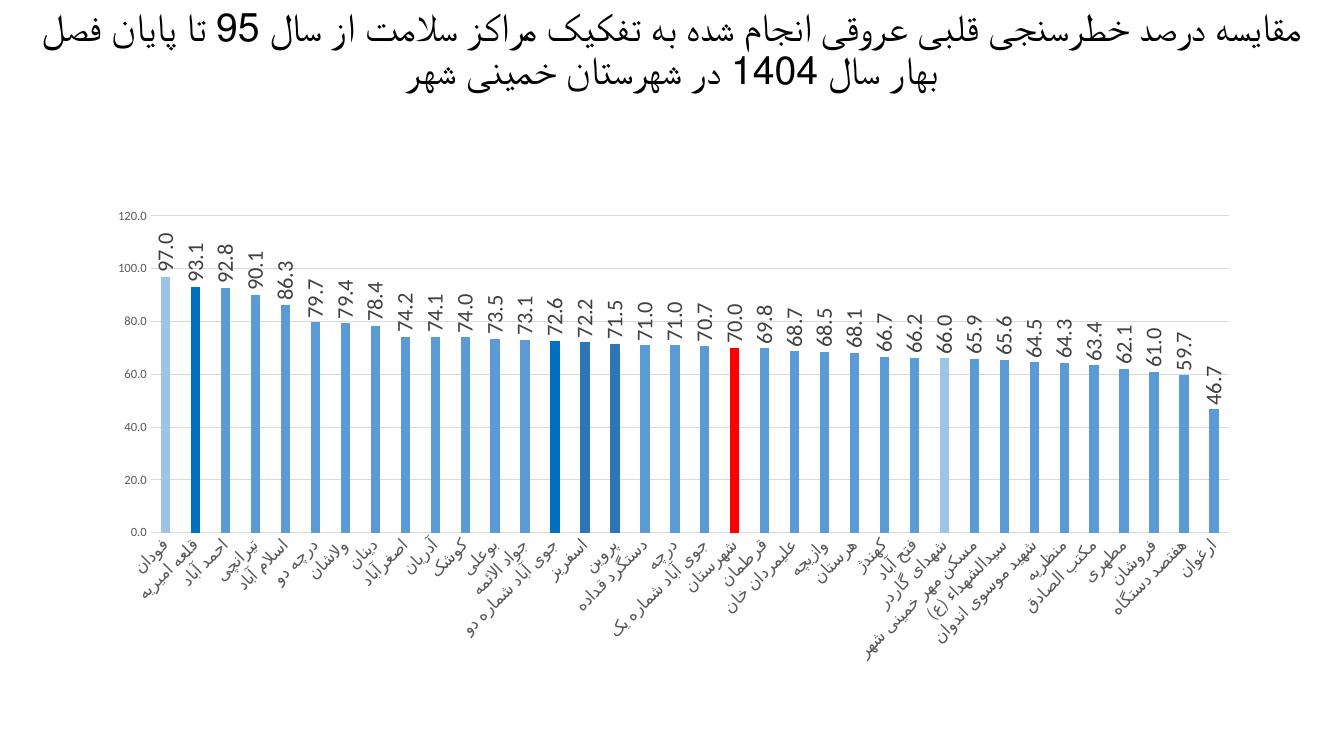
from lxml.etree import SubElement
from pptx import Presentation
from pptx.chart.data import CategoryChartData
from pptx.dml.color import RGBColor
from pptx.enum.chart import XL_CHART_TYPE, XL_LABEL_POSITION, XL_TICK_MARK
from pptx.enum.text import MSO_ANCHOR, MSO_AUTO_SIZE, PP_ALIGN
from pptx.oxml.ns import qn
from pptx.util import Inches, Pt

TITLE = ("مقایسه درصد خطرسنجی قلبی عروقی انجام شده به تفکیک مراکز سلامت از "
         "سال 95 تا پایان فصل بهار سال 1404 در شهرستان خمینی شهر")
CENTERS = [
    ("فودان", 97), ("قلعه امیریه", 93.1), ("احمد آباد", 92.8), ("تیرانچی", 90.1),
    ("اسلام آباد", 86.3), ("درچه دو", 79.7), ("ولاشان", 79.4), ("دینان", 78.4),
    ("اصغرآباد", 74.2), ("آدریان", 74.1), ("کوشک", 74), ("بوعلی", 73.5),
    ("جواد الائمه", 73.1), ("جوی آباد شماره دو", 72.6), ("اسفریز", 72.2),
    ("پروین", 71.5), ("دستگرد قداده", 71), ("درچه", 71), ("جوی آباد شماره یک", 70.7),
    ("شهرستان", 70), ("قرطمان", 69.8), ("علیمردان خان", 68.7), ("وازیچه", 68.5),
    ("هرستان", 68.1), ("کهندژ", 66.7), ("فتح آباد", 66.2), ("شهدای گاردر", 66),
    ("مسکن مهر خمینی شهر", 65.9), ("سیدالشهداء (ع)", 65.6),
    ("شهید موسوی اندوان", 64.5), ("منظریه", 64.3), ("مکتب الصادق", 63.4),
    ("مطهری", 62.1), ("فروشان", 61), ("هفتصد دستگاه", 59.7), ("ارغوان", 46.7),
]
BAR_COLOR = "5B9BD5"
HIGHLIGHTS = {"فودان": "9DC3E6", "قلعه امیریه": "0070C0", "جوی آباد شماره دو": "0070C0",
              "اسفریز": "2E75B6", "پروین": "2E75B6", "شهرستان": "FF0000",
              "شهدای گاردر": "9DC3E6"}
PLOT_SHARES = {"x": 0.05, "y": 0.03, "w": 0.93, "h": 0.66}
FONT = "Calibri"


def color(value):
    return RGBColor.from_string(value)


def style_font(font, size, value):
    font.name, font.size, font.bold = FONT, Pt(size), False
    font.color.rgb = color(value)


def style_line(line, value):
    line.color.rgb = color(value)
    line.width = Pt(0.75)


def rotate_text(element, degrees):
    body = element.find(qn("c:txPr")).find(qn("a:bodyPr"))
    body.set("rot", str(degrees * 60000))
    body.set("vert", "horz")


def place_plot(chart):
    plot_area = chart.plots[0]._element.getparent()
    for old_layout in plot_area.findall(qn("c:layout")):
        plot_area.remove(old_layout)
    layout = SubElement(plot_area, qn("c:layout"))
    plot_area.insert(0, layout)
    manual = SubElement(layout, qn("c:manualLayout"))
    settings = {"layoutTarget": "inner", "xMode": "edge", "yMode": "edge", **PLOT_SHARES}
    for name, value in settings.items():
        SubElement(manual, qn(f"c:{name}")).set("val", str(value))


def add_title(slide):
    title = slide.shapes.title
    title.left, title.top = Inches(0.23), 0
    title.width, title.height = Inches(12.87), Inches(1)
    frame = title.text_frame
    frame.text = TITLE
    frame.auto_size = MSO_AUTO_SIZE.NONE
    frame.vertical_anchor = MSO_ANCHOR.MIDDLE
    paragraph = frame.paragraphs[0]
    paragraph.alignment = PP_ALIGN.CENTER
    paragraph.line_spacing = 0.9
    paragraph._p.get_or_add_pPr().set("rtl", "1")
    style_font(paragraph.runs[0].font, 28, "000000")


def add_center_chart(slide):
    names, values = zip(*CENTERS)
    data = CategoryChartData(number_format="0.0")
    data.categories = names
    data.add_series("Series 1", values)
    chart = slide.shapes.add_chart(XL_CHART_TYPE.COLUMN_CLUSTERED, Inches(0.92), Inches(2),
                                   Inches(11.5), Inches(4.76), data).chart
    chart.has_legend = chart.has_title = False
    style_font(chart.font, 10, "000000")
    place_plot(chart)

    plot = chart.plots[0]
    plot.gap_width, plot.overlap, plot.vary_by_categories = 219, -27, False
    series = plot.series[0]
    series.format.fill.solid()
    series.format.fill.fore_color.rgb = color(BAR_COLOR)
    for index, name in enumerate(names):
        if name in HIGHLIGHTS:
            fill = series.points[index].format.fill
            fill.solid()
            fill.fore_color.rgb = color(HIGHLIGHTS[name])

    labels = series.data_labels
    labels.show_value = True
    labels.number_format, labels.number_format_is_linked = "0.0", False
    labels.position = XL_LABEL_POSITION.OUTSIDE_END
    style_font(labels.font, 16, "404040")
    rotate_text(labels._element, -90)

    for axis, size in ((chart.category_axis, 12), (chart.value_axis, 9)):
        axis.major_tick_mark = axis.minor_tick_mark = XL_TICK_MARK.NONE
        style_font(axis.tick_labels.font, size, "595959")
    style_line(chart.category_axis.format.line, "D9D9D9")
    rotate_text(chart.category_axis._element, -45)

    value_axis = chart.value_axis
    value_axis.minimum_scale, value_axis.maximum_scale, value_axis.major_unit = 0, 120, 20
    value_axis.tick_labels.number_format = "0.0"
    value_axis.tick_labels.number_format_is_linked = False
    value_axis.format.line.fill.background()
    value_axis.has_major_gridlines = True
    style_line(value_axis.major_gridlines.format.line, "D9D9D9")


def main():
    presentation = Presentation()
    presentation.slide_width, presentation.slide_height = Inches(13.33), Inches(7.5)
    slide = presentation.slides.add_slide(presentation.slide_layouts[5])
    add_title(slide)
    add_center_chart(slide)
    presentation.save("out.pptx")


if __name__ == "__main__":
    main()
